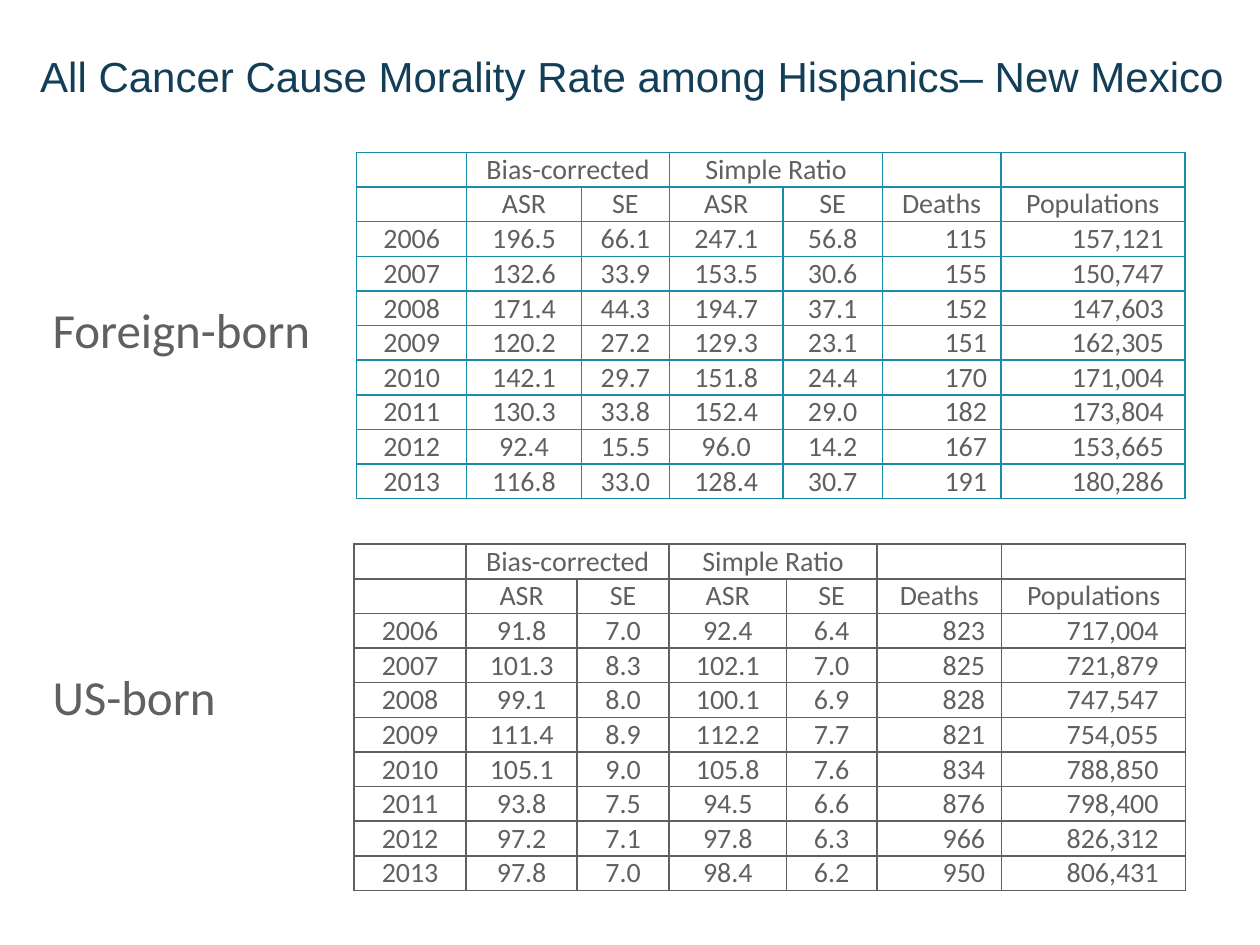
from dataclasses import dataclass

from lxml import etree
from pptx import Presentation
from pptx.dml.color import RGBColor
from pptx.enum.text import MSO_ANCHOR, PP_ALIGN
from pptx.oxml.ns import qn
from pptx.util import Pt

CENTER, RIGHT = PP_ALIGN.CENTER, PP_ALIGN.RIGHT
MIDDLE, BOTTOM = MSO_ANCHOR.MIDDLE, MSO_ANCHOR.BOTTOM

NAVY, TEAL, GRAY = "123E57", "178DA9", "606060"
ROW_HEIGHT = 19.8
BORDER_WIDTH = 1
FIRST_YEAR = 2006
DEATHS, POPULATIONS = 5, 6
HEADERS = [
    ["", "Bias-corrected", "", "Simple Ratio", "", "", ""],
    ["", "ASR", "SE", "ASR", "SE", "Deaths", "Populations"],
]


@dataclass
class Label:
    text: str
    left: float
    top: float
    width: float
    height: float
    size: float
    font: str
    color: str
    margins: tuple[float, float]
    wrap: bool = False


@dataclass
class RateTable:
    left: float
    top: float
    widths: list[float]
    border: str
    right_margins: dict[int, float]
    rates: list[str]


LABELS = [
    Label("All Cancer Cause Morality Rate among Hispanics– New Mexico",
          23, 28.8, 686, 41, 24, "Arial", NAVY, (0, 0), True),
    Label("Foreign-born", 23, 167.8, 163.4, 41, 28, "Calibri", GRAY, (7.2, 3.6)),
    Label("US-born", 23, 377.3, 108.7, 41, 28, "Calibri", GRAY, (7.2, 3.6)),
]

TABLES = [
    RateTable(203.8, 87.1, [62.9, 65.5, 50.4, 64.8, 56.9, 67.7, 105.1], TEAL,
              {DEATHS: 8, POPULATIONS: 12}, [
        "196.5 66.1 247.1 56.8 115 157,121",
        "132.6 33.9 153.5 30.6 155 150,747",
        "171.4 44.3 194.7 37.1 152 147,603",
        "120.2 27.2 129.3 23.1 151 162,305",
        "142.1 29.7 151.8 24.4 170 171,004",
        "130.3 33.8 152.4 29.0 182 173,804",
        "92.4 15.5 96.0 14.2 167 153,665",
        "116.8 33.0 128.4 30.7 191 180,286",
    ]),
    RateTable(202.3, 311, [64.1, 63.4, 52.6, 67, 51.8, 71.3, 105.1], GRAY,
              {DEATHS: 9.5, POPULATIONS: 15.5}, [
        "91.8 7.0 92.4 6.4 823 717,004",
        "101.3 8.3 102.1 7.0 825 721,879",
        "99.1 8.0 100.1 6.9 828 747,547",
        "111.4 8.9 112.2 7.7 821 754,055",
        "105.1 9.0 105.8 7.6 834 788,850",
        "93.8 7.5 94.5 6.6 876 798,400",
        "97.2 7.1 97.8 6.3 966 826,312",
        "97.8 7.0 98.4 6.2 950 806,431",
    ]),
]


def rgb(color: str) -> RGBColor:
    return RGBColor.from_string(color)


def style_paragraph(paragraph, size: float, font: str, color: str) -> None:
    paragraph.font.size = Pt(size)
    paragraph.font.name = font
    paragraph.font.color.rgb = rgb(color)


def add_label(page, label: Label) -> None:
    box = page.shapes.add_textbox(
        Pt(label.left), Pt(label.top), Pt(label.width), Pt(label.height))
    frame = box.text_frame
    frame.word_wrap = label.wrap
    side, end = label.margins
    frame.margin_left = frame.margin_right = Pt(side)
    frame.margin_top = frame.margin_bottom = Pt(end)
    paragraph = frame.paragraphs[0]
    paragraph.text = label.text
    style_paragraph(paragraph, label.size, label.font, label.color)


def set_borders(cell, color: str) -> None:
    """Draw all four sides of a cell; must run before its fill is set."""
    properties = cell._tc.get_or_add_tcPr()
    for side in ("a:lnL", "a:lnR", "a:lnT", "a:lnB"):
        line = etree.SubElement(properties, qn(side), w=str(Pt(BORDER_WIDTH)))
        fill = etree.SubElement(line, qn("a:solidFill"))
        etree.SubElement(fill, qn("a:srgbClr"), val=color)


def add_rate_table(page, spec_table: RateTable) -> None:
    years = [[str(FIRST_YEAR + index), *line.split()]
             for index, line in enumerate(spec_table.rates)]
    rows = HEADERS + years
    table = page.shapes.add_table(
        len(rows), len(spec_table.widths), Pt(spec_table.left), Pt(spec_table.top),
        Pt(sum(spec_table.widths)), Pt(ROW_HEIGHT * len(rows))).table
    table.first_row = table.horz_banding = False
    for column, width in zip(table.columns, spec_table.widths):
        column.width = Pt(width)
    for row in table.rows:
        row.height = Pt(ROW_HEIGHT)
    for first in (1, 3):
        table.cell(0, first).merge(table.cell(0, first + 1))

    for row_index, values in enumerate(rows):
        is_header = row_index < len(HEADERS)
        for column_index, value in enumerate(values):
            cell = table.cell(row_index, column_index)
            set_borders(cell, spec_table.border)
            cell.fill.background()
            cell.margin_left = cell.margin_right = Pt(0)
            cell.margin_top = cell.margin_bottom = Pt(0)
            cell.vertical_anchor = MIDDLE if is_header else BOTTOM
            paragraph = cell.text_frame.paragraphs[0]
            paragraph.text = value
            paragraph.alignment = CENTER
            if not is_header and column_index in spec_table.right_margins:
                paragraph.alignment = RIGHT
                cell.margin_right = Pt(spec_table.right_margins[column_index])
            style_paragraph(paragraph, 16, "Calibri", GRAY)


def main() -> None:
    deck = Presentation()
    deck.slide_width, deck.slide_height = Pt(720), Pt(540)
    page = deck.slides.add_slide(deck.slide_layouts[6])
    for label in LABELS:
        add_label(page, label)
    for rate_table in TABLES:
        add_rate_table(page, rate_table)
    deck.save("out.pptx")


if __name__ == "__main__":
    main()
